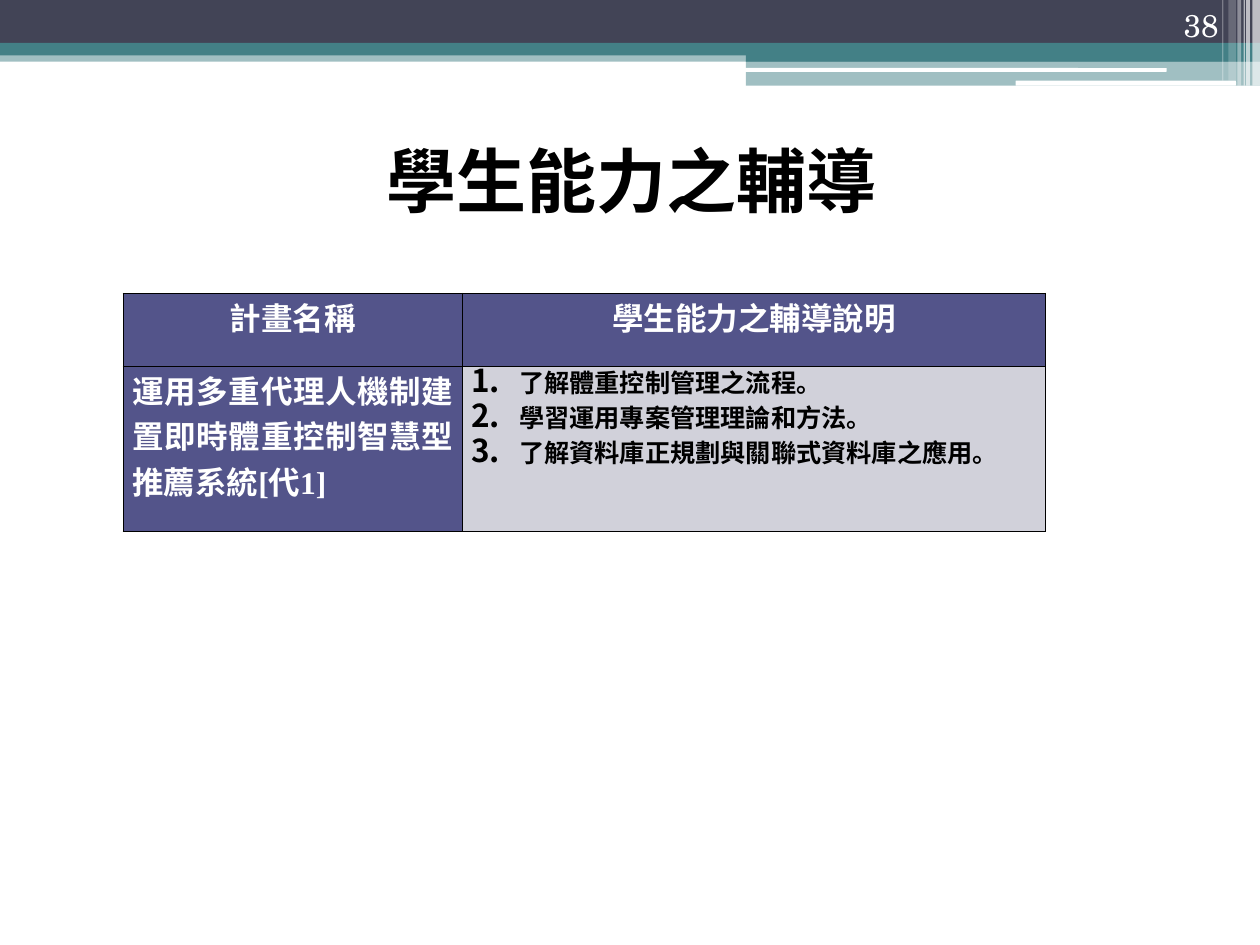
from lxml.etree import SubElement
from pptx import Presentation
from pptx.dml.color import RGBColor
from pptx.enum.shapes import MSO_SHAPE as Shape
from pptx.enum.text import MSO_ANCHOR as Anchor, PP_ALIGN as Align
from pptx.oxml.ns import qn
from pptx.util import Inches, Pt

COLORS = {
    "navy": "424456", "teal": "438086", "violet": "53548A",
    "lilac": "D1D1DA", "white": "FFFFFF", "black": "000000",
}
CJK_FONT = "Noto Sans CJK TC"
LATIN_FONT = "Times New Roman"
NUMBER_FONT = "TeX Gyre Schola"

BANDS = [
    (0, 0.4, 10, 0.09, "teal", 50),
    (0, 0, 10, 0.34, "navy", 100),
    (0, 0.34, 10, 0.1, "teal", 100),
    (5.92, 0.39, 4.08, 0.1, "teal", 100),
    (5.92, 0.48, 4.08, 0.2, "teal", 50),
]
ROUNDED_BARS = [(5.91, 0.54, 3.35, 0.03), (8.06, 0.64, 1.75, 0.04)]
STRIPES = [
    (9.94, 0.06, 0.68, 65), (9.89, 0.03, 0.68, 65), (9.87, 0.01, 0.68, 60),
    (9.82, 0.03, 0.68, 40), (9.75, 0.06, 0.64, 20), (9.7, 0.01, 0.64, 30),
]
HEADERS = ["計畫名稱", "學生能力之輔導說明"]
PROJECT = "運用多重代理人機制建置即時體重控制智慧型推薦系統[代1]"
GOALS = [
    "了解體重控制管理之流程。",
    "學習運用專案管理理論和方法。",
    "了解資料庫正規劃與關聯式資料庫之應用。",
]


def rgb(name):
    return RGBColor.from_string(COLORS[name])


def add_bar(page, left, top, width, height, color, opacity=100, kind=Shape.RECTANGLE):
    bar = page.shapes.add_shape(
        kind, Inches(left), Inches(top), Inches(width), Inches(height))
    bar.shadow.inherit = False
    bar.line.fill.background()
    bar.fill.solid()
    bar.fill.fore_color.rgb = rgb(color)
    if opacity < 100:
        tint = bar.fill._xPr.find(".//" + qn("a:srgbClr"))
        SubElement(tint, qn("a:alpha"), val=str(opacity * 1000))
    return bar


def format_paragraph(para, size, color, font, align, bold=True):
    para.alignment = align
    for span in para.runs:
        span.font.size = Pt(size)
        span.font.bold = bold
        span.font.name = font
        span.font.color.rgb = rgb(color)
        SubElement(span.font._element, qn("a:ea"), typeface=CJK_FONT)


def number_paragraph(para):
    para.line_spacing = Pt(20)
    props = para._p.get_or_add_pPr()
    props.set("marL", str(Inches(0.38)))
    props.set("indent", str(-Inches(0.38)))
    SubElement(props, qn("a:buFont"), typeface=CJK_FONT)
    SubElement(props, qn("a:buAutoNum"), type="arabicPeriod")
    for span in para.runs:
        span.font._element.set("cap", "small")


def style_cell(cell, fill):
    cell.margin_left = cell.margin_right = Inches(0.07)
    cell.margin_top = cell.margin_bottom = 0
    props = cell._tc.get_or_add_tcPr()
    for side in ("lnL", "lnR", "lnT", "lnB"):
        line = SubElement(props, qn(f"a:{side}"), w=str(Pt(1)))
        paint = SubElement(line, qn("a:solidFill"))
        SubElement(paint, qn("a:srgbClr"), val=COLORS["black"])
    cell.fill.solid()
    cell.fill.fore_color.rgb = rgb(fill)


def fill_cell(cell, text, fill, color, align):
    style_cell(cell, fill)
    cell.text_frame.text = text
    for para in cell.text_frame.paragraphs:
        format_paragraph(para, 18, color, LATIN_FONT, align)


def add_decoration(page):
    for band in BANDS:
        add_bar(page, *band)
    for place in ROUNDED_BARS:
        add_bar(page, *place, "white", kind=Shape.ROUNDED_RECTANGLE)
    for left, width, height, opacity in STRIPES:
        add_bar(page, left, 0, width, height, "white", opacity)


def add_title(page, text):
    title = page.shapes.title
    title.left, title.top = Inches(0.51), Inches(0.84)
    title.width, title.height = Inches(9), Inches(1.17)
    title.text_frame.text = text
    title.text_frame.vertical_anchor = Anchor.MIDDLE
    format_paragraph(title.text_frame.paragraphs[0], 40, "black", CJK_FONT, Align.CENTER)


def add_page_number(page, text):
    box = page.shapes.add_textbox(Inches(8.94), 0, Inches(0.83), Inches(0.4))
    box.text_frame.word_wrap = True
    box.text_frame.vertical_anchor = Anchor.BOTTOM
    box.text_frame.text = text
    format_paragraph(box.text_frame.paragraphs[0], 18, "white", NUMBER_FONT,
                     Align.RIGHT, bold=False)


def add_project_table(page):
    table = page.shapes.add_table(
        2, 2, Inches(0.98), Inches(2.33), Inches(7.32), Inches(1.89)).table
    for column, width in zip(table.columns, (2.69, 4.63)):
        column.width = Inches(width)
    for row, height in zip(table.rows, (0.58, 1.31)):
        row.height = Inches(height)
    for index, header in enumerate(HEADERS):
        fill_cell(table.cell(0, index), header, "violet", "white", Align.CENTER)
    fill_cell(table.cell(1, 0), PROJECT, "violet", "white", Align.JUSTIFY)
    goals = table.cell(1, 1)
    fill_cell(goals, "\n".join(GOALS), "lilac", "black", Align.LEFT)
    for para in goals.text_frame.paragraphs:
        number_paragraph(para)


def main():
    deck = Presentation()
    deck.slide_width, deck.slide_height = Inches(10), Inches(7.5)
    page = deck.slides.add_slide(deck.slide_layouts[5])
    add_decoration(page)
    add_title(page, "學生能力之輔導")
    add_page_number(page, "38")
    add_project_table(page)
    deck.save("out.pptx")


if __name__ == "__main__":
    main()
